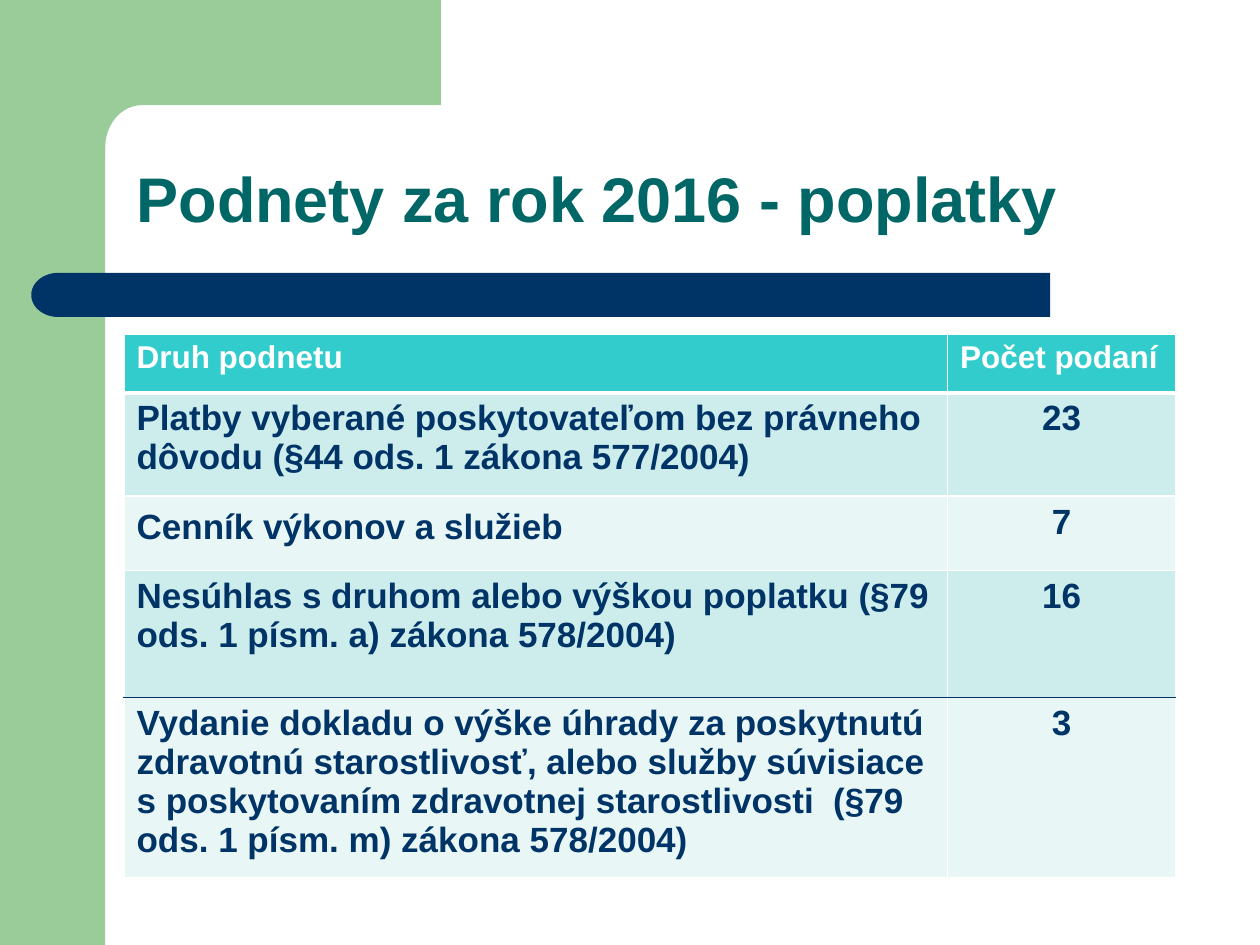
import math
from dataclasses import dataclass

from lxml import etree
from pptx import Presentation
from pptx.dml.color import RGBColor
from pptx.enum import shapes, text
from pptx.oxml import ns
from pptx.util import Cm, Pt


@dataclass(frozen=True)
class Theme:
    font: str = "Arial"
    green: str = "99CC99"
    navy: str = "003366"
    teal: str = "006666"
    white: str = "FFFFFF"
    header: str = "33CCCC"
    bands: tuple = ("CDECEC", "E8F6F6")
    title_size: int = 36
    header_size: int = 18
    body_size: int = 20


THEME = Theme()

COMPLAINTS = [
    ("Druh podnetu", "Počet podaní"),
    ("Platby vyberané poskytovateľom bez právneho dôvodu (§44 ods. 1 zákona 577/2004)", "23"),
    ("Cenník výkonov a služieb", "7"),
    ("Nesúhlas s druhom alebo výškou poplatku (§79 ods. 1 písm. a) zákona 578/2004)", "16"),
    ("Vydanie dokladu o výške úhrady za poskytnutú zdravotnú starostlivosť, alebo služby "
     "súvisiace s poskytovaním zdravotnej starostlivosti  (§79 ods. 1 písm. m) zákona 578/2004)",
     "3"),
]
COLUMN_WIDTHS = (16.6, 4.6)
ROW_HEIGHTS = (1.19, 2.08, 1.5, 2.56, 3.64)
PRICE_LIST_ROW = 2
RULED_ROW = 3


def paint(shape, color):
    shape.shadow.inherit = False
    shape.fill.solid()
    shape.fill.fore_color.rgb = RGBColor.from_string(color)
    shape.line.fill.background()


def style(paragraph, size, color):
    font = paragraph.font
    font.name, font.size, font.bold = THEME.font, Pt(size), True
    font.color.rgb = RGBColor.from_string(color)


def add_corner(slide, left, top, width, height):
    """Green side band and top block, joined by a rounded inner corner."""
    band, block_left = 2.12, 1.27
    side = slide.shapes.add_shape(
        shapes.MSO_SHAPE.RECTANGLE, Cm(left), Cm(top), Cm(band), Cm(height))
    paint(side, THEME.green)

    radius_x, radius_y = 0.74, 0.86
    angles = [math.radians(90 * step / 12) for step in range(13)]
    curve = [(band + radius_x * (1 - math.sin(a)), band + radius_y * (1 - math.cos(a)))
             for a in angles]
    bottom = 3.25
    outline = [(width, 0), (width, band), *curve,
               (band, bottom), (block_left, bottom), (block_left, 0)]
    points = [(Cm(left + x), Cm(top + y)) for x, y in outline]
    builder = slide.shapes.build_freeform(*points[0])
    builder.add_line_segments(points[1:], close=True)
    paint(builder.convert_to_shape(), THEME.green)


def add_bar(slide, left, top, width, height):
    """Navy bar with a rounded left end."""
    cap = 1.08
    body = slide.shapes.add_shape(
        shapes.MSO_SHAPE.RECTANGLE, Cm(left + cap), Cm(top), Cm(width - cap), Cm(height))
    end = slide.shapes.add_shape(
        shapes.MSO_SHAPE.FLOWCHART_DELAY, Cm(left), Cm(top), Cm(cap), Cm(height))
    end.rotation = 180
    for part in (body, end):
        paint(part, THEME.navy)


def place_title(slide, wording, left, top, width, height):
    title = slide.shapes.title
    title.left, title.top, title.width, title.height = map(Cm, (left, top, width, height))
    frame = title.text_frame
    frame.text = wording
    frame.word_wrap = True
    frame.auto_size = text.MSO_AUTO_SIZE.NONE
    frame.vertical_anchor = text.MSO_ANCHOR.BOTTOM
    heading = frame.paragraphs[0]
    heading.alignment = text.PP_ALIGN.LEFT
    heading.line_spacing = 0.9
    style(heading, THEME.title_size, THEME.teal)
    title.element.getparent().append(title.element)


def add_border(cell, side, color, points):
    properties = cell._tc.get_or_add_tcPr()
    line = etree.SubElement(properties, ns.qn(f"a:ln{side}"), w=str(Pt(points)))
    fill = etree.SubElement(line, ns.qn("a:solidFill"))
    etree.SubElement(fill, ns.qn("a:srgbClr"), val=color)


def format_cell(cell, row, column):
    top = (THEME.navy, 1) if row == RULED_ROW + 1 else (THEME.white, 3 if row == 1 else 1)
    bottom = (THEME.navy, 1) if row == RULED_ROW else (THEME.white, 1 if row else 3)
    plain = (THEME.white, 1)
    for side, border in zip("LRTB", (plain, plain, top, bottom)):
        add_border(cell, side, *border)

    is_header = row == 0
    background = THEME.header if is_header else THEME.bands[(row - 1) % 2]
    cell.fill.solid()
    cell.fill.fore_color.rgb = RGBColor.from_string(background)

    paragraph = cell.text_frame.paragraphs[0]
    if is_header:
        style(paragraph, THEME.header_size, THEME.white)
    else:
        style(paragraph, THEME.body_size, THEME.navy)
        if column == 1:
            paragraph.alignment = text.PP_ALIGN.CENTER
        elif row == PRICE_LIST_ROW:
            paragraph.line_spacing = 1.15


def add_complaints_table(slide, left, top):
    table = slide.shapes.add_table(
        len(COMPLAINTS), len(COLUMN_WIDTHS), Cm(left), Cm(top),
        Cm(sum(COLUMN_WIDTHS)), Cm(sum(ROW_HEIGHTS))).table
    for column, width in zip(table.columns, COLUMN_WIDTHS):
        column.width = Cm(width)
    for row, height in zip(table.rows, ROW_HEIGHTS):
        row.height = Cm(height)
    for row, entries in enumerate(COMPLAINTS):
        for column, wording in enumerate(entries):
            cell = table.cell(row, column)
            cell.text = wording
            format_cell(cell, row, column)


def main():
    deck = Presentation()
    deck.slide_width, deck.slide_height = Cm(25.4), Cm(19.05)
    slide = deck.slides.add_slide(deck.slide_layouts.get_by_name("Title Only"))
    add_corner(slide, 0, 0, 8.89, 19.05)
    add_bar(slide, 0.63, 5.5, 20.54, 0.89)
    place_title(slide, "Podnety za rok 2016 - poplatky", 2.5, 2.52, 22.02, 2.36)
    add_complaints_table(slide, 2.5, 6.73)
    deck.save("out.pptx")


if __name__ == "__main__":
    main()
